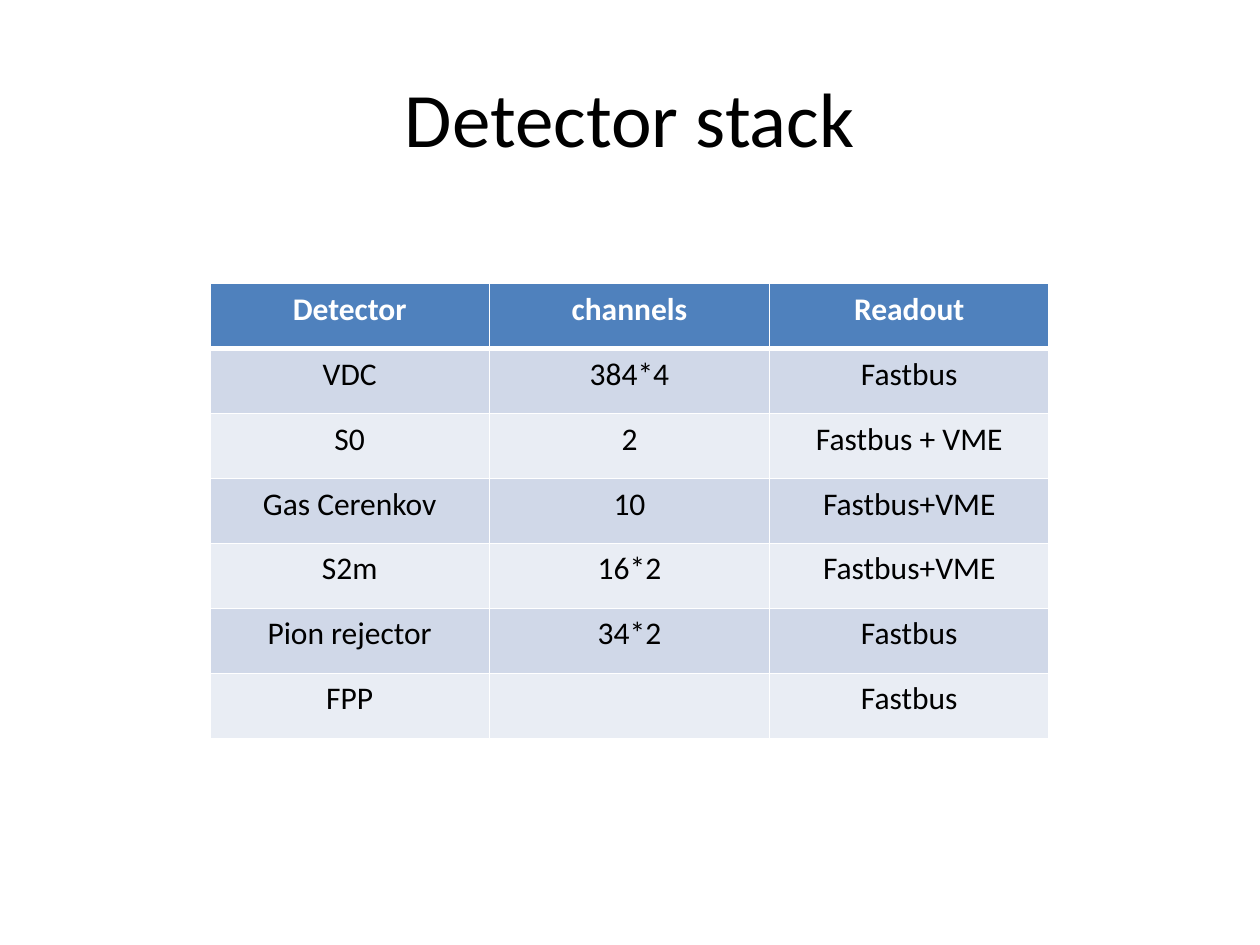
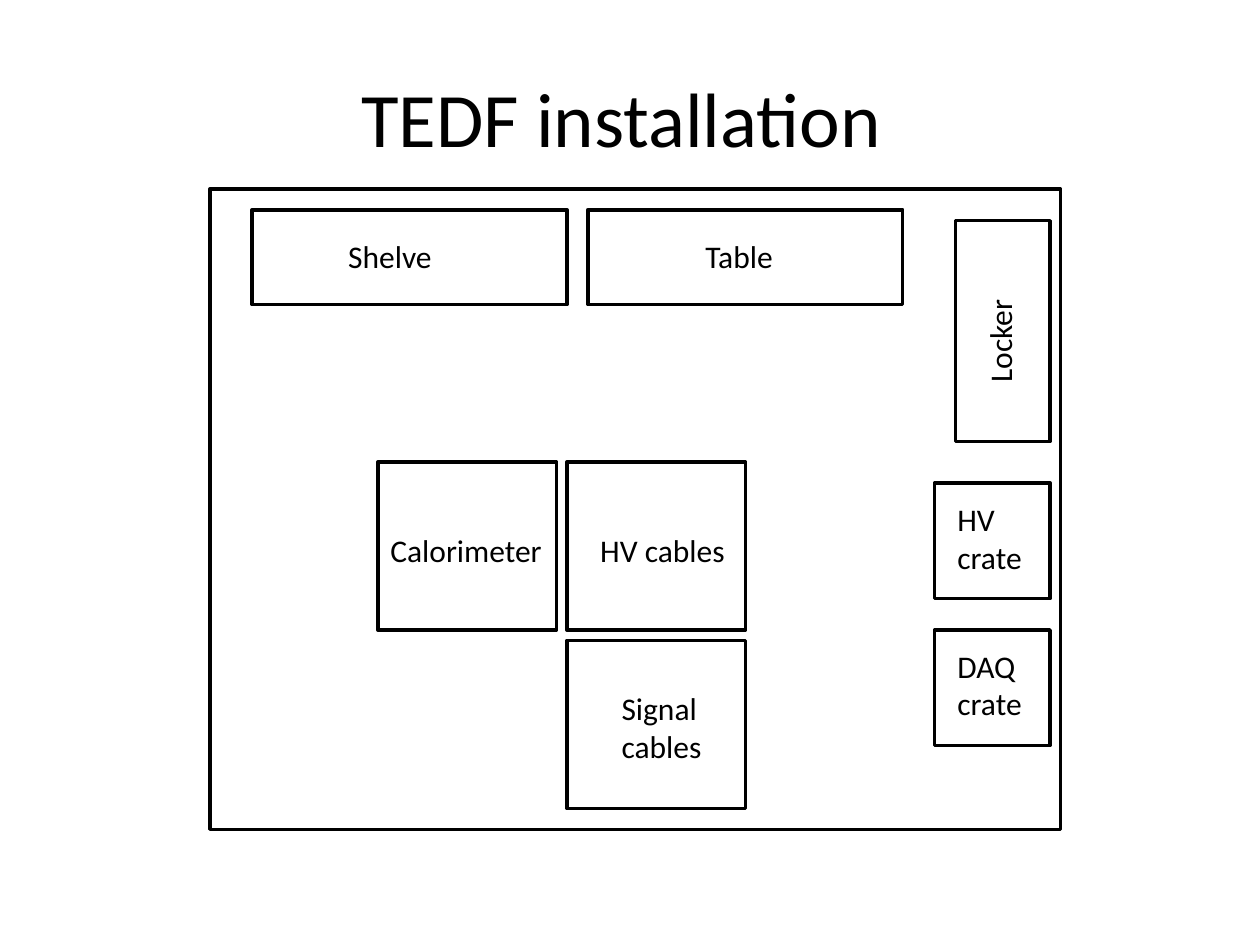
from dataclasses import dataclass

from lxml import etree
from pptx import Presentation
from pptx import util as u
from pptx.dml.color import RGBColor
from pptx.enum import shapes, text
from pptx.oxml import ns


@dataclass(frozen=True)
class Theme:
    font: str = "Calibri"
    ink: str = "000000"
    paper: str = "FFFFFF"
    header: str = "4F81BD"
    bands: tuple = ("D0D8E8", "E9EDF4")
    title_size: int = 44
    body_size: int = 18
    outline: int = 2
    rule: int = 1
    header_rule: int = 3


class Deck:
    """Holds the theme and the slide being drawn."""

    def __init__(self, theme):
        self.theme = theme
        self.prs = Presentation()
        self.prs.slide_width, self.prs.slide_height = u.Cm(25.4), u.Cm(19.05)
        self.s = None

    def set_text(self, tf, lines, align, **changes):
        fmt = {"name": self.theme.font, "size": u.Pt(self.theme.body_size),
               "bold": False, **changes}
        color = fmt.pop("color", self.theme.ink)
        for i, line in enumerate(lines):
            p = tf.paragraphs[0] if i == 0 else tf.add_paragraph()
            p.alignment = align
            r = p.add_run()
            r.text = line
            for key, value in fmt.items():
                setattr(r.font, key, value)
            r.font.color.rgb = RGBColor.from_string(color)

    def slide(self, title):
        self.s = self.prs.slides.add_slide(self.prs.slide_layouts[5])
        sp = self.s.shapes.title
        frame = {"left": 1.27, "top": 0.76, "width": 22.86, "height": 3.18}
        for key, value in frame.items():
            setattr(sp, key, u.Cm(value))
        sp.text_frame.vertical_anchor = text.MSO_ANCHOR.MIDDLE
        self.set_text(sp.text_frame, [title], text.PP_ALIGN.CENTER,
                      size=u.Pt(self.theme.title_size))

    def box(self, *frame):
        sp = self.s.shapes.add_shape(shapes.MSO_SHAPE.RECTANGLE, *map(u.Cm, frame))
        sp.shadow.inherit = False
        sp.fill.background()
        sp.line.color.rgb = RGBColor.from_string(self.theme.ink)
        sp.line.width = u.Pt(self.theme.outline)

    def label(self, words, left, top, width, rotation=0):
        lines = words.split("\n")
        height = 1.02 if len(lines) == 1 else 1.8
        sp = self.s.shapes.add_textbox(*map(u.Cm, (left, top, width, height)))
        sp.rotation = rotation
        tf = sp.text_frame
        tf.word_wrap = False
        tf.auto_size = text.MSO_AUTO_SIZE.SHAPE_TO_FIT_TEXT
        self.set_text(tf, lines, text.PP_ALIGN.LEFT)

    def borders(self, cell, **widths):
        # Border lines have to precede the fill inside the cell properties
        tc_pr = cell._tc.get_or_add_tcPr()
        for i, (side, width) in enumerate(widths.items()):
            ln = etree.Element(ns.qn(f"a:ln{side}"), w=str(u.Pt(width)))
            fill = etree.SubElement(ln, ns.qn("a:solidFill"))
            etree.SubElement(fill, ns.qn("a:srgbClr"), val=self.theme.paper)
            tc_pr.insert(i, ln)

    def table(self, rows, left, top, col_width, row_height):
        t = self.theme
        n_rows, n_cols = len(rows), len(rows[0])
        frame = (left, top, col_width * n_cols, row_height * n_rows)
        tbl = self.s.shapes.add_table(n_rows, n_cols, *map(u.Cm, frame)).table
        for col in tbl.columns:
            col.width = u.Cm(col_width)
        for i, row in enumerate(rows):
            tbl.rows[i].height = u.Cm(row_height)
            head = i == 0
            for j, words in enumerate(row):
                cell = tbl.cell(i, j)
                cell.fill.solid()
                cell.fill.fore_color.rgb = RGBColor.from_string(
                    t.header if head else t.bands[(i - 1) % 2])
                self.borders(cell, L=t.rule, R=t.rule,
                             T=t.header_rule if i == 1 else t.rule,
                             B=t.header_rule if head else t.rule)
                if words:
                    self.set_text(cell.text_frame, [words], text.PP_ALIGN.CENTER,
                                  bold=head, color=t.paper if head else t.ink)


DETECTORS = [
    ("Detector", "channels", "Readout"),
    ("VDC", "384*4", "Fastbus"),
    ("S0", "2", "Fastbus + VME"),
    ("Gas Cerenkov", "10", "Fastbus+VME"),
    ("S2m", "16*2", "Fastbus+VME"),
    ("Pion rejector", "34*2", "Fastbus"),
    ("FPP", "", "Fastbus"),
]

ROOM = (4.23, 3.81, 17.15, 12.91)
BENCH, BAY, CRATE = (6.35, 1.91), (3.6, 3.39), (2.33, 2.33)

# Corner and size of each item, then its label with left, top, width, rotation
FURNITURE = [
    ((5.08, 4.23), BENCH, ("Shelve", 6.77, 4.66, 2.21)),
    ((11.85, 4.23), BENCH, ("Table", 13.97, 4.66, 1.88)),
    ((19.26, 4.45), (1.91, 4.45), ("Locker", 19.05, 6.35, 2.21, 270)),
    ((7.62, 9.31), BAY, ("Calorimeter", 7.62, 10.58, 3.6)),
    ((11.43, 9.31), BAY, ("HV cables", 11.85, 10.58, 3.05)),
    ((11.43, 12.91), BAY, ("Signal\ncables", 12.28, 13.76, 2.13)),
    ((18.84, 9.74), CRATE, ("HV\ncrate", 19.05, 9.95, 1.83)),
    ((18.84, 12.7), CRATE, ("DAQ\ncrate", 19.05, 12.91, 1.83)),
]


def main():
    deck = Deck(Theme())

    # Detector table
    deck.slide("Detector stack")
    deck.table(DETECTORS, left=4.23, top=5.72, col_width=5.64, row_height=1.31)

    # Floor plan
    deck.slide("TEDF installation ")
    deck.box(*ROOM)
    for corner, size, label in FURNITURE:
        deck.box(*corner, *size)
        deck.label(*label)

    deck.prs.save("out.pptx")


if __name__ == "__main__":
    main()
